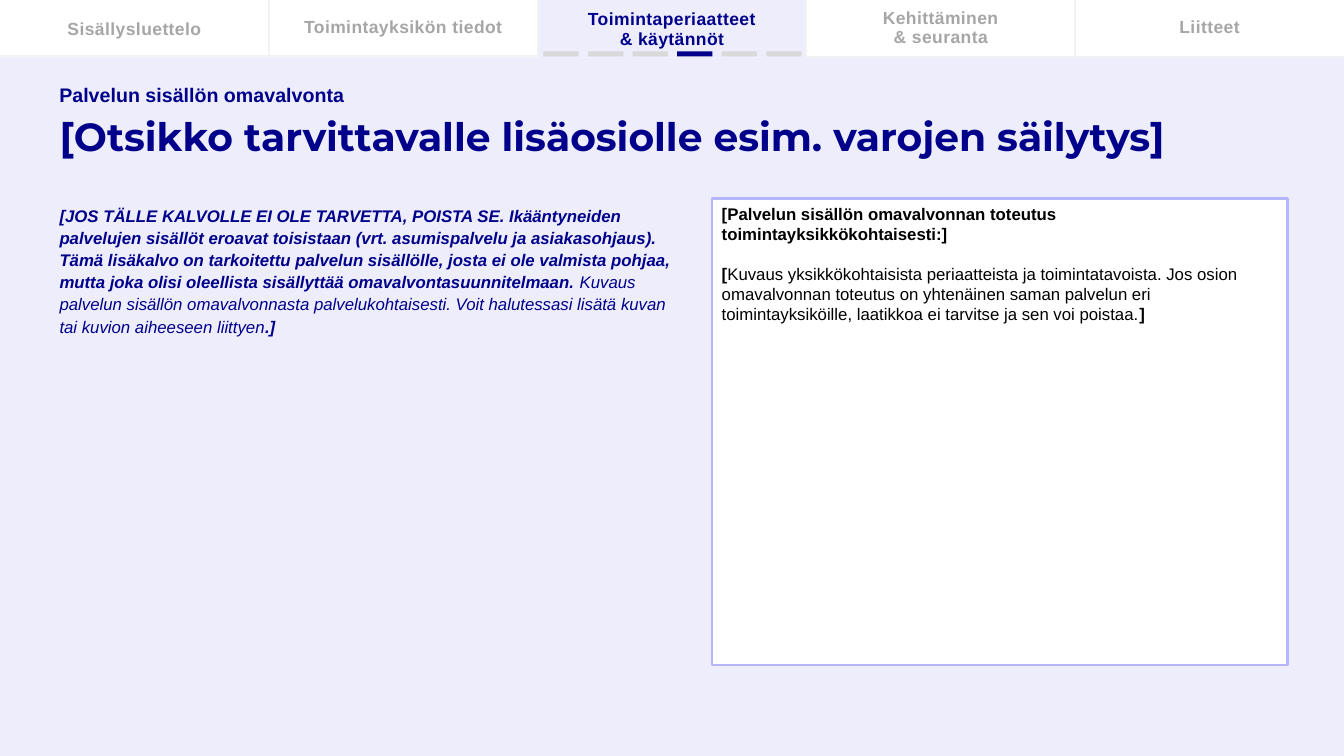
"""Build a self-monitoring plan slide with a navigation bar, a guidance text and a description box."""
from lxml.etree import SubElement
from pptx import Presentation
from pptx.dml.color import RGBColor
from pptx.enum.shapes import MSO_CONNECTOR, MSO_SHAPE
from pptx.enum.text import MSO_ANCHOR, MSO_AUTO_SIZE, PP_ALIGN
from pptx.oxml.ns import qn
from pptx.util import Inches, Pt

NAVY, GREY, LILAC, WHITE = "00008B", "A6A6A6", "EDEDFC", "FFFFFF"


def style(font, size, color, bold=None, name="Arial"):
    font.name, font.size, font.bold = name, Pt(size), bold
    font.color.rgb = RGBColor.from_string(color)


def add_rectangle(left, top, width, height, color):
    shape = page.shapes.add_shape(MSO_SHAPE.RECTANGLE, Inches(left), Inches(top),
                                  Inches(width), Inches(height))
    shape.shadow.inherit = False
    shape.fill.solid()
    shape.fill.fore_color.rgb = RGBColor.from_string(color)
    shape.line.fill.background()
    return shape


deck = Presentation()
deck.slide_width, deck.slide_height = Inches(13.33), Inches(7.5)
page = deck.slides.add_slide(deck.slide_layouts[1])
page.background.fill.solid()
page.background.fill.fore_color.rgb = RGBColor.from_string(LILAC)

bar_height, tab_width = 0.57, 13.33 / 5
add_rectangle(0, 0, 13.33, bar_height, WHITE)
add_rectangle(5.34, 0, 2.65, bar_height, LILAC)

tabs = [("Sisällysluettelo", 0.57, GREY),
        ("Toimintayksikön tiedot", 0.54, GREY),
        ("Toimintaperiaatteet\v& käytännöt", 0.58, NAVY),
        ("Kehittäminen\v& seuranta", 0.55, GREY),
        ("Liitteet", 0.54, GREY)]
for index, (label, height, color) in enumerate(tabs):
    box = page.shapes.add_textbox(Inches(index * tab_width), 0, Inches(tab_width), Inches(height))
    box.text_frame.word_wrap = True
    box.text_frame.vertical_anchor = MSO_ANCHOR.MIDDLE
    para = box.text_frame.paragraphs[0]
    para.text = label
    para.alignment, para.line_spacing = PP_ALIGN.CENTER, Pt(14)
    style(para.font, 12.5, color, True)
    for span in para.runs:
        span._r.get_or_add_rPr().set("spc", "30")

dividers = [(index * tab_width, 0, index * tab_width, bar_height) for index in range(1, 5)]
dividers += [(0, 0.56, 2 * tab_width, 0.56), (3 * tab_width, bar_height, 13.33, bar_height)]
for ends in dividers:
    divider = page.shapes.add_connector(MSO_CONNECTOR.STRAIGHT, *[Inches(value) for value in ends])
    divider.line.color.rgb = RGBColor.from_string("F2F2F2")
    divider.line.width = Pt(1.5)
    SubElement(divider._element.spPr, qn("a:effectLst"))

for step in range(6):
    add_rectangle(5.39 + step * 0.442, 0.51, 0.35, 0.05, NAVY if step == 3 else "D9D9D9")

title = page.shapes.title
title.left, title.top, title.width, title.height = [Inches(v) for v in (0.49, 0.9, 12.35, 0.95)]
title.text_frame.text = "[Otsikko tarvittavalle lisäosiolle esim. varojen säilytys]"
title.text_frame.vertical_anchor = MSO_ANCHOR.MIDDLE
title.text_frame.auto_size = MSO_AUTO_SIZE.NONE
para = title.text_frame.paragraphs[0]
para.alignment, para.line_spacing = PP_ALIGN.LEFT, 0.9
style(para.font, 28, NAVY, True, "Montserrat")

section = page.shapes.add_textbox(Inches(0.49), Inches(0.82), Inches(3.04), Inches(0.24))
frame = section.text_frame
frame.margin_top = frame.margin_bottom = 0
frame.vertical_anchor = MSO_ANCHOR.MIDDLE
frame.text = "Palvelun sisällön omavalvonta"
style(frame.paragraphs[0].font, 14, NAVY, True)

guidance = page.placeholders[1]
guidance.left, guidance.top, guidance.width, guidance.height = [
    Inches(v) for v in (0.49, 1.97, 6.44, 4.76)]
guidance.text_frame.auto_size = MSO_AUTO_SIZE.NONE
para = guidance.text_frame.paragraphs[0]
para.line_spacing, para.space_before, para.space_after = 1.1, Pt(0), Pt(1.8)
properties = para._p.get_or_add_pPr()
properties.set("marL", "0")
properties.set("indent", "0")
SubElement(properties, qn("a:buNone"))
style(para.font, 12, NAVY)
para.font.italic = True
guidance_spans = [
    ("[JOS TÄLLE KALVOLLE EI OLE TARVETTA, POISTA SE. Ikääntyneiden palvelujen sisällöt eroavat "
     "toisistaan (vrt. asumispalvelu ja asiakasohjaus). Tämä lisäkalvo on tarkoitettu palvelun "
     "sisällölle, josta ei ole valmista pohjaa, mutta joka olisi oleellista sisällyttää "
     "omavalvontasuunnitelmaan. ", True),
    ("Kuvaus palvelun sisällön omavalvonnasta palvelukohtaisesti. Voit halutessasi lisätä kuvan "
     "tai kuvion aiheeseen liittyen", False),
    (".]", True)]

description = add_rectangle(7.06, 1.97, 5.71, 4.63, WHITE)
description.line.color.rgb = RGBColor.from_string("B5B5FF")
description.line.width = Pt(1.5)
frame = description.text_frame
frame.word_wrap = True
frame.vertical_anchor = MSO_ANCHOR.TOP
heading, details = frame.paragraphs[0], frame.add_paragraph()
details.space_before = Pt(14)
for paragraph in (heading, details):
    paragraph.alignment = PP_ALIGN.LEFT
    style(paragraph.font, 12, "000000")
heading_spans = [("[Palvelun sisällön omavalvonnan toteutus toimintayksikkökohtaisesti:]", True)]
details_spans = [
    ("[", True),
    ("Kuvaus yksikkökohtaisista periaatteista ja toimintatavoista. Jos osion omavalvonnan toteutus "
     "on yhtenäinen saman palvelun eri toimintayksiköille, laatikkoa ei tarvitse ja sen voi "
     "poistaa.", False),
    ("]", True)]

for paragraph, spans in ((para, guidance_spans), (heading, heading_spans), (details, details_spans)):
    for text, bold in spans:
        span = paragraph.add_run()
        span.text, span.font.bold = text, bold

deck.save("out.pptx")
